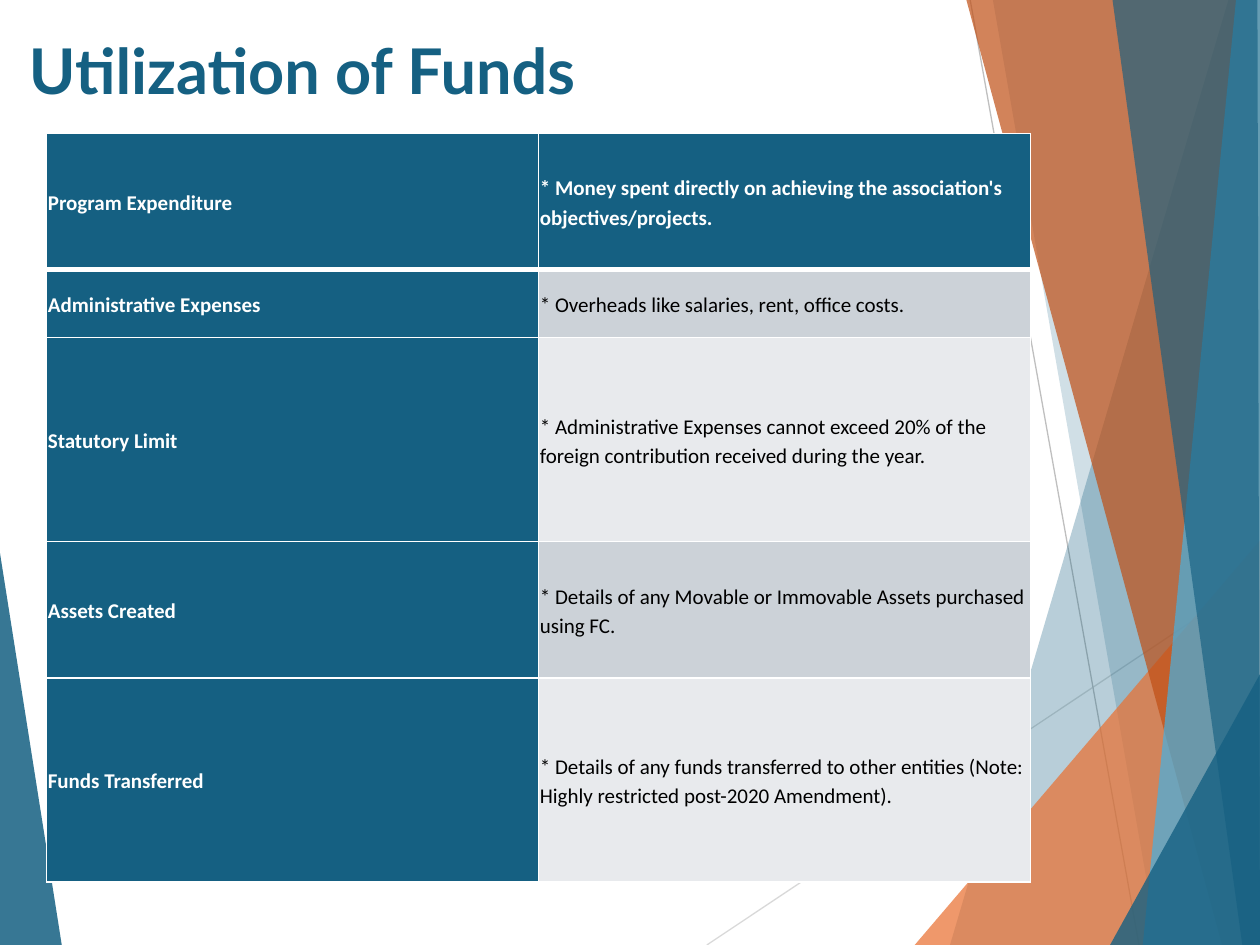
from lxml.etree import SubElement
from pptx import Presentation
from pptx.dml.color import RGBColor
from pptx.enum.shapes import MSO_CONNECTOR
from pptx.enum.text import MSO_ANCHOR, MSO_AUTO_SIZE, PP_ALIGN
from pptx.oxml.ns import qn
from pptx.util import Inches, Pt

# Content
TITLE = "Utilization of Funds"
ROWS = [  # label, detail, row height
    ("Program Expenditure",
     "* Money spent directly on achieving the association's objectives/projects.", 1.08),
    ("Administrative Expenses",
     "* Overheads like salaries, rent, office costs.", 0.54),
    ("Statutory Limit",
     "* Administrative Expenses cannot exceed 20% of the foreign contribution "
     "received during the year.", 1.62),
    ("Assets Created",
     "* Details of any Movable or Immovable Assets purchased using FC.", 1.08),
    ("Funds Transferred",
     "* Details of any funds transferred to other entities "
     "(Note: Highly restricted post-2020 Amendment).", 1.62),
]

THEME = {
    "teal": "156082", "orange": "E97132", "rust": "C04F15", "sky": "46B1E1",
    "white": "FFFFFF", "black": "000000", "bands": ("E8EAED", "CCD2D8"),
    "title_font": "Lato", "title_size": 36, "cell_font": "Calibri", "cell_size": 12,
}

# Background facets: colour, opacity in percent, corner points
W, H = 10, 7.5
LEFT_FACET = ("teal", 85, [(0, 4.39), (0.49, H), (0, H)])
RIGHT_FACETS = [
    ("teal", 30, [(9.75, 0), (7.54, H), (W, H), (W, 0)]),
    ("teal", 20, [(7.88, 0), (9.19, H), (W, H), (W, 0)]),
    ("orange", 72, [(7.26, H), (W, 4.29), (W, H)]),
    ("rust", 70, [(7.67, 0), (9.7, H), (W, H), (W, 0)]),
    ("sky", 70, [(9.81, 0), (9.07, H), (W, H), (W, 0)]),
    ("teal", 65, [(8.83, 0), (9.86, H), (W, H), (9.98, 0)]),
    ("teal", 80, [(8.81, H), (W, 5.35), (W, H)]),
]
LINES = [("D9D9D9", (5.61, H), (W, 4.57)), ("BFBFBF", (7.7, 0), (9.04, H))]


def rgb(value):
    return RGBColor.from_string(value)


def add_facet(s, color, opacity, points):
    pts = [(Inches(x), Inches(y)) for x, y in points]
    builder = s.shapes.build_freeform(*pts[0])
    builder.add_line_segments(pts[1:], close=True)
    sp = builder.convert_to_shape()
    sp.shadow.inherit = False
    sp.fill.solid()
    sp.fill.fore_color.rgb = rgb(THEME[color])
    sp.line.fill.background()
    clr = sp.fill._xPr.find(qn("a:solidFill"))[0]
    SubElement(clr, qn("a:alpha")).set("val", str(opacity * 1000))


def add_line(s, color, start, end):
    ends = [Inches(v) for v in start + end]
    line = s.shapes.add_connector(MSO_CONNECTOR.STRAIGHT, *ends)
    line.line.color.rgb = rgb(color)
    line.line.width = Pt(0.75)
    SubElement(line._element.spPr, qn("a:effectLst"))


def add_run(p, text, font, size, color, bold):
    r = p.add_run()
    r.text = text
    r.font.name, r.font.size, r.font.bold = font, Pt(size), bold
    r.font.color.rgb = rgb(color)


def set_borders(cell, bottom):
    tcPr = cell._tc.get_or_add_tcPr()
    for side, width in (("L", 1), ("R", 1), ("T", 1), ("B", bottom)):
        ln = SubElement(tcPr, qn(f"a:ln{side}"), w=str(Pt(width)))
        fill = SubElement(ln, qn("a:solidFill"))
        SubElement(fill, qn("a:srgbClr"), val=THEME["white"])


def fill_cell(cell, text, fill, color, bold, bottom):
    set_borders(cell, bottom)
    cell.fill.solid()
    cell.fill.fore_color.rgb = rgb(fill)
    cell.vertical_anchor = MSO_ANCHOR.MIDDLE
    cell.margin_left = cell.margin_right = Inches(0.01)
    cell.margin_top = cell.margin_bottom = Inches(0.01)
    p = cell.text_frame.paragraphs[0]
    p.line_spacing, p.space_after = 1.15, Pt(8)
    add_run(p, text, THEME["cell_font"], THEME["cell_size"], color, bold)


def main():
    prs = Presentation()
    prs.slide_width, prs.slide_height = Inches(W), Inches(H)
    s = prs.slides.add_slide(prs.slide_layouts[5])

    # Background
    add_facet(s, *LEFT_FACET)
    for line in LINES:
        add_line(s, *line)
    for facet in RIGHT_FACETS:
        add_facet(s, *facet)

    # Title
    title = s.shapes.title
    title.left, title.top = Inches(0.13), Inches(0.2)
    title.width, title.height = Inches(6.94), Inches(0.85)
    tf = title.text_frame
    tf.word_wrap = True
    tf.auto_size = MSO_AUTO_SIZE.NONE
    tf.vertical_anchor = MSO_ANCHOR.TOP
    p = tf.paragraphs[0]
    p.alignment = PP_ALIGN.LEFT
    add_run(p, TITLE, THEME["title_font"], THEME["title_size"], THEME["teal"], True)

    # Table: teal header row and label column, banded details
    height = sum(row[2] for row in ROWS)
    table = s.shapes.add_table(len(ROWS), 2, Inches(0.37), Inches(1.06),
                               Inches(7.81), Inches(height)).table
    table.first_row = table.horz_banding = False
    for i, (label, detail, row_height) in enumerate(ROWS):
        table.rows[i].height = Inches(row_height)
        for j, text in enumerate((label, detail)):
            head = i == 0 or j == 0
            fill = THEME["teal"] if head else THEME["bands"][i % 2]
            color = THEME["white"] if head else THEME["black"]
            fill_cell(table.cell(i, j), text, fill, color, head, 3 if i == 0 else 1)
            if i == 1:  # shares the thick rule under the header row
                top = table.cell(i, j)._tc.tcPr.find(qn("a:lnT"))
                top.set("w", str(Pt(3)))

    prs.save("out.pptx")


if __name__ == "__main__":
    main()
